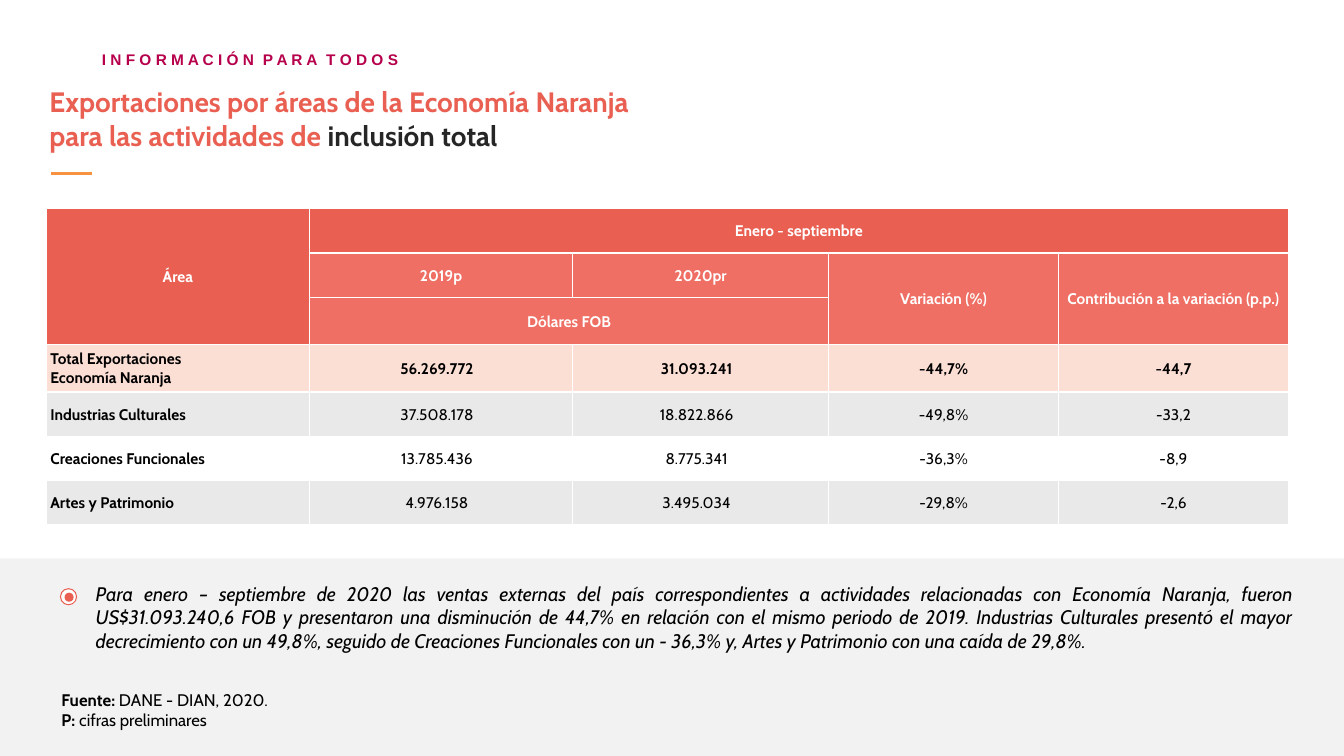
import pptx
import pptx.util
import pptx.dml.color
import pptx.enum.shapes
import pptx.enum.text
import pptx.oxml
from pptx.util import Inches

COLORS = {
    "magenta": "B6004C", "coral": "E96052", "light_coral": "EF6F64",
    "peach": "FBDED4", "gray": "E9E9E9", "panel": "F2F2F2",
    "orange": "F69240", "dark": "262626", "black": "000000", "white": "FFFFFF",
}
NAMESPACE = 'xmlns:a="http://schemas.openxmlformats.org/drawingml/2006/main"'
ALIGN = pptx.enum.text.PP_ALIGN
SHAPE = pptx.enum.shapes.MSO_SHAPE


def rgb(name):
    return pptx.dml.color.RGBColor.from_string(COLORS[name])


def write(frame, paragraphs, size=11, color="black", bold=False, italic=False,
          font="Cabin", align=ALIGN.LEFT, margins=(0, 0, 0, 0), line_spacing=None):
    """Fill a frame; each paragraph is a list of (text, run overrides)."""
    frame.word_wrap = True
    (frame.margin_left, frame.margin_top,
     frame.margin_right, frame.margin_bottom) = [Inches(value) for value in margins]
    for index, runs in enumerate(paragraphs):
        paragraph = frame.add_paragraph() if index else frame.paragraphs[0]
        paragraph.alignment = align
        paragraph.line_spacing = line_spacing
        for text, changes in runs:
            run = paragraph.add_run()
            run.text = text
            run.font.name = font
            run.font.size = pptx.util.Pt(size)
            run.font.bold = changes.get("bold", bold)
            run.font.italic = italic
            run.font.color.rgb = rgb(changes.get("color", color))
            if "spacing" in changes:
                run.font._element.set("spc", str(changes["spacing"]))


presentation = pptx.Presentation()
presentation.slide_width = Inches(13.33)
presentation.slide_height = Inches(7.5)
slide = presentation.slides.add_slide(presentation.slide_layouts[6])
shapes = slide.shapes

# Section label, with a wider gap between its words
label = shapes.add_textbox(Inches(0.99), Inches(0.4), Inches(4.1), Inches(0.25))
gap = (" ", {"spacing": 300})
write(label.text_frame,
      [[("I N F O R M A C I Ó N", {}), gap, ("P A R A", {}), gap, ("T O D O S", {})]],
      font="Arial", color="magenta", bold=True, margins=(0.02, 0.04, 0, 0),
      line_spacing=1.3)

panel = shapes.add_shape(SHAPE.RECTANGLE, 0, Inches(5.54), Inches(13.33), Inches(1.96))
panel.shadow.inherit = False
panel.fill.solid()
panel.fill.fore_color.rgb = rgb("panel")
panel.line.fill.background()

# Title and its rule
title = shapes.add_textbox(Inches(0.48), Inches(0.84), Inches(11.74), Inches(1.01))
write(title.text_frame,
      [[("Exportaciones por áreas de la Economía Naranja", {})],
       [("para las actividades de ", {}), ("inclusión total", {"color": "dark"})]],
      size=20, color="coral", bold=True, margins=(0.01, 0, 0, 0))

rule = shapes.add_connector(pptx.enum.shapes.MSO_CONNECTOR.STRAIGHT,
                            Inches(0.51), Inches(1.72), Inches(0.91), Inches(1.72))
rule.line.color.rgb = rgb("orange")
rule.line.width = pptx.util.Pt(2.25)
rule._element.spPr.append(pptx.oxml.parse_xml(f"<a:effectLst {NAMESPACE}/>"))

# Source and commentary
source = shapes.add_textbox(Inches(0.48), Inches(6.77), Inches(3.07), Inches(0.54))
write(source.text_frame,
      [[("Fuente: ", {"bold": True}), ("DANE - DIAN, 2020.", {})],
       [("P: ", {"bold": True}), ("cifras preliminares", {})]],
      size=12, margins=(0.13, 0.07, 0.13, 0.07))

commentary = shapes.add_textbox(Inches(0.82), Inches(5.7), Inches(12.14), Inches(0.84))
write(commentary.text_frame,
      [[("Para enero – septiembre de 2020 las ventas externas del país correspondientes a "
         "actividades relacionadas con Economía Naranja, fueron US$31.093.240,6 FOB y "
         "presentaron una disminución de 44,7% en relación con el mismo periodo de 2019. "
         "Industrias Culturales presentó el mayor decrecimiento con un 49,8%, seguido de "
         "Creaciones Funcionales con un - 36,3% y, Artes y Patrimonio con una caída de "
         "29,8%.", {})]],
      size=14, italic=True, align=ALIGN.JUSTIFY, margins=(0.13, 0.07, 0.13, 0.07))

# Export table
rows = [
    ["Área", "Enero - septiembre", "", "", ""],
    ["", "2019p", "2020pr", "Variación (%)", "Contribución a la variación (p.p.)"],
    ["", "Dólares FOB", "", "", ""],
    ["Total Exportaciones\nEconomía Naranja", "56.269.772", "31.093.241", "-44,7%", "-44,7"],
    ["Industrias Culturales", "37.508.178", "18.822.866", "-49,8%", "-33,2"],
    ["Creaciones Funcionales", "13.785.436", "8.775.341", "-36,3%", "-8,9"],
    ["Artes y Patrimonio", "4.976.158", "3.495.034", "-29,8%", "-2,6"],
]
row_fills = ["coral", "light_coral", "light_coral", "peach", "gray", None, "gray"]
column_widths = [2.61, 2.61, 2.54, 2.28, 2.28]
row_heights = [0.44, 0.44, 0.47, 0.47, 0.44, 0.44, 0.44]
header_rows, total_row = 3, 3

table = shapes.add_table(len(rows), len(column_widths), Inches(0.46), Inches(2.07),
                         Inches(sum(column_widths)), Inches(sum(row_heights))).table
table.first_row = False
table.horz_banding = False
for column, width in zip(table.columns, column_widths):
    column.width = Inches(width)
for row, height in zip(table.rows, row_heights):
    row.height = Inches(height)

for row_index, row in enumerate(rows):
    is_header = row_index < header_rows
    for column_index, text in enumerate(row):
        cell = table.cell(row_index, column_index)
        is_area = column_index == 0
        is_amount = not is_header and column_index in (1, 2)
        fill = "coral" if is_header and is_area else row_fills[row_index]
        cell.vertical_anchor = pptx.enum.text.MSO_ANCHOR.MIDDLE
        right = 0.12 if is_amount else 0.04
        cell.margin_left, cell.margin_right = Inches(0.04), Inches(right)
        cell.margin_top, cell.margin_bottom = Inches(0.01), 0
        properties = cell._tc.get_or_add_tcPr()
        for side in ("lnL", "lnR", "lnT", "lnB"):
            properties.append(pptx.oxml.parse_xml(
                f'<a:{side} {NAMESPACE} w="12700"><a:solidFill>'
                f'<a:srgbClr val="{COLORS["white"]}"/></a:solidFill></a:{side}>'))
        if fill:
            cell.fill.solid()
            cell.fill.fore_color.rgb = rgb(fill)
        else:
            cell.fill.background()
        if text:
            write(cell.text_frame, [[(line, {})] for line in text.split("\n")],
                  color="white" if is_header else "black",
                  bold=is_area or row_index <= total_row,
                  align=ALIGN.LEFT if is_area and not is_header else ALIGN.CENTER,
                  margins=(0.04, 0.01, right, 0))

for first, last in [((0, 0), (2, 0)), ((0, 1), (0, 4)), ((1, 3), (2, 3)),
                    ((1, 4), (2, 4)), ((2, 1), (2, 2))]:
    table.cell(*first).merge(table.cell(*last))

# Round bullet beside the commentary
bullet = shapes.add_group_shape()
for left, top, diameter, fill in [(0.6, 5.84, 0.16, "white"), (0.64, 5.88, 0.09, "coral")]:
    circle = bullet.shapes.add_shape(SHAPE.OVAL, Inches(left), Inches(top),
                                     Inches(diameter), Inches(diameter))
    circle.shadow.inherit = False
    circle.fill.solid()
    circle.fill.fore_color.rgb = rgb(fill)
    if fill == "white":
        circle.line.color.rgb = rgb("coral")
        circle.line.width = pptx.util.Pt(0.75)
    else:
        circle.line.fill.background()

presentation.save("out.pptx")
